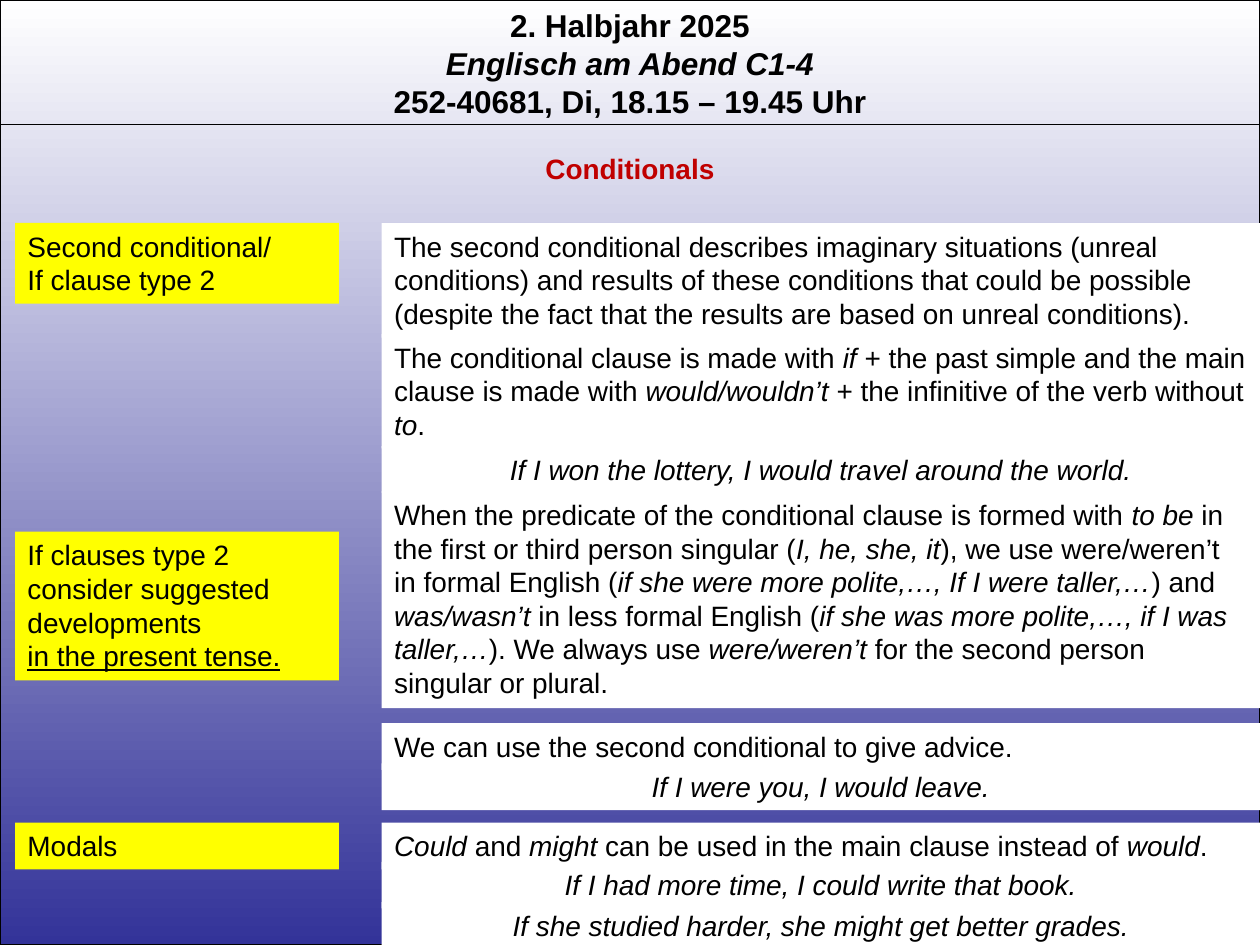
"""Build the course slide on the second conditional."""
from lxml.etree import SubElement
from pptx import Presentation
from pptx.dml.color import RGBColor
from pptx.enum.shapes import MSO_CONNECTOR, MSO_SHAPE
from pptx.enum.text import MSO_ANCHOR, MSO_AUTO_SIZE, PP_ALIGN
from pptx.oxml.ns import qn
from pptx.util import Pt

PX = 9144
WIDTH, HEIGHT = 1000, 750
COLORS = {"black": "000000", "white": "FFFFFF", "indigo": "333399",
          "yellow": "FFFF00", "red": "C00000"}
LABEL_X, LABEL_W = 12, 257
BODY_X, BODY_W = 303, 697
LINE_H, PADDING = 27, 10

HEADER = ["2. Halbjahr 2025", "*Englisch am Abend C1-4*",
          "252-40681, Di, 18.15 – 19.45 Uhr"]
TITLE = ["Conditionals"]

LABELS = [
    (177, 2, ["Second conditional/", "If clause type 2"]),
    (422, 4, ["If clauses type 2 consider suggested developments",
              "_in the present tense._"]),
    (653, 1, ["Modals"]),
]

EXPLANATIONS = [
    (177, 3, "The second conditional describes imaginary situations (unreal "
             "conditions) and results of these conditions that could be possible "
             "(despite the fact that the results are based on unreal conditions)."),
    (265, 3, "The conditional clause is made with *if* + the past simple and the "
             "main clause is made with *would/wouldn’t *+ the infinitive of the "
             "verb without *to*."),
    (574, 1, "We can use the second conditional to give advice."),
    (653, 1, "*Could* and *might* can be used in the main clause instead of *would*."),
    (390, 6, "When the predicate of the conditional clause is formed with *to be *in "
             "the first or third person singular (*I, he, she, it*), we use "
             "were/weren’t in formal English (*if she were more polite,…, If I were "
             "taller,…*) and *was/wasn’t *in less formal English (*if she was more "
             "polite,…, if I was taller,…*). We always use *were/weren’t *for the "
             "second person singular or plural."),
]

EXAMPLES = [
    (354, "*If I won the lottery, I would travel around the world.*"),
    (606, "*If I were you, I would leave.*"),
    (684, "*If I had more time, I could write that book.*"),
    (716, "*If she studied harder, she might get better grades.*"),
]


def rgb(name):
    return RGBColor.from_string(COLORS[name])


def box(x, y, w, h):
    return [v * PX for v in (x, y, w, h)]


def write(sp, lines, align=PP_ALIGN.LEFT, size=16, color="black", bold=False):
    tf = sp.text_frame
    frame_format = {"word_wrap": True, "vertical_anchor": MSO_ANCHOR.TOP,
                    "auto_size": MSO_AUTO_SIZE.SHAPE_TO_FIT_TEXT}
    for name, value in frame_format.items():
        setattr(tf, name, value)
    for i, line in enumerate(lines):
        p = tf.add_paragraph() if i else tf.paragraphs[0]
        p.alignment = align
        underline = line.startswith("_")
        for j, part in enumerate(line.strip("_").split("*")):
            if not part:
                continue
            r = p.add_run()
            r.text = part
            font_format = {"name": "Arial", "size": Pt(size), "bold": bold,
                           "italic": j % 2 == 1, "underline": underline}
            for name, value in font_format.items():
                setattr(r.font, name, value)
            r.font.color.rgb = rgb(color)


def add_panel(s, x, y, w, n_lines, fill, lines, align=PP_ALIGN.LEFT):
    sp = s.shapes.add_shape(MSO_SHAPE.RECTANGLE,
                            *box(x, y, w, n_lines * LINE_H + PADDING))
    sp.shadow.inherit = False
    sp.fill.solid()
    sp.fill.fore_color.rgb = rgb(fill)
    sp.line.fill.background()
    write(sp, lines, align)


def add_background(s):
    sp = s.shapes.add_shape(MSO_SHAPE.RECTANGLE, *box(0, 0, WIDTH, HEIGHT))
    sp.shadow.inherit = False
    sp.fill.gradient()
    sp.fill.gradient_angle = 270
    for stop, color in zip(sp.fill.gradient_stops, ("white", "indigo")):
        stop.color.rgb = rgb(color)
    sp.line.color.rgb = rgb("black")
    sp.line.width = Pt(0.75)


def add_header(s):
    sp = s.shapes.add_textbox(*box(0, 0, WIDTH, 101))
    write(sp, HEADER, PP_ALIGN.CENTER, size=18, bold=True)
    rule = s.shapes.add_connector(MSO_CONNECTOR.STRAIGHT, *box(0, 99, WIDTH, 99))
    rule.line.color.rgb = rgb("black")
    rule.line.width = Pt(0.75)
    SubElement(rule._element.spPr, qn("a:effectLst"))


def main():
    prs = Presentation()
    prs.slide_width, prs.slide_height = WIDTH * PX, HEIGHT * PX
    s = prs.slides.add_slide(prs.slide_layouts[6])
    add_background(s)
    add_header(s)
    title = s.shapes.add_textbox(*box(0, 115, WIDTH, 37))
    write(title, TITLE, PP_ALIGN.CENTER, color="red", bold=True)
    for y, n_lines, lines in LABELS:
        add_panel(s, LABEL_X, y, LABEL_W, n_lines, "yellow", lines)
    for y, n_lines, text in EXPLANATIONS:
        add_panel(s, BODY_X, y, BODY_W, n_lines, "white", [text])
    for y, text in EXAMPLES:
        add_panel(s, BODY_X, y, BODY_W, 1, "white", [text], PP_ALIGN.CENTER)
    prs.save("out.pptx")


if __name__ == "__main__":
    main()
